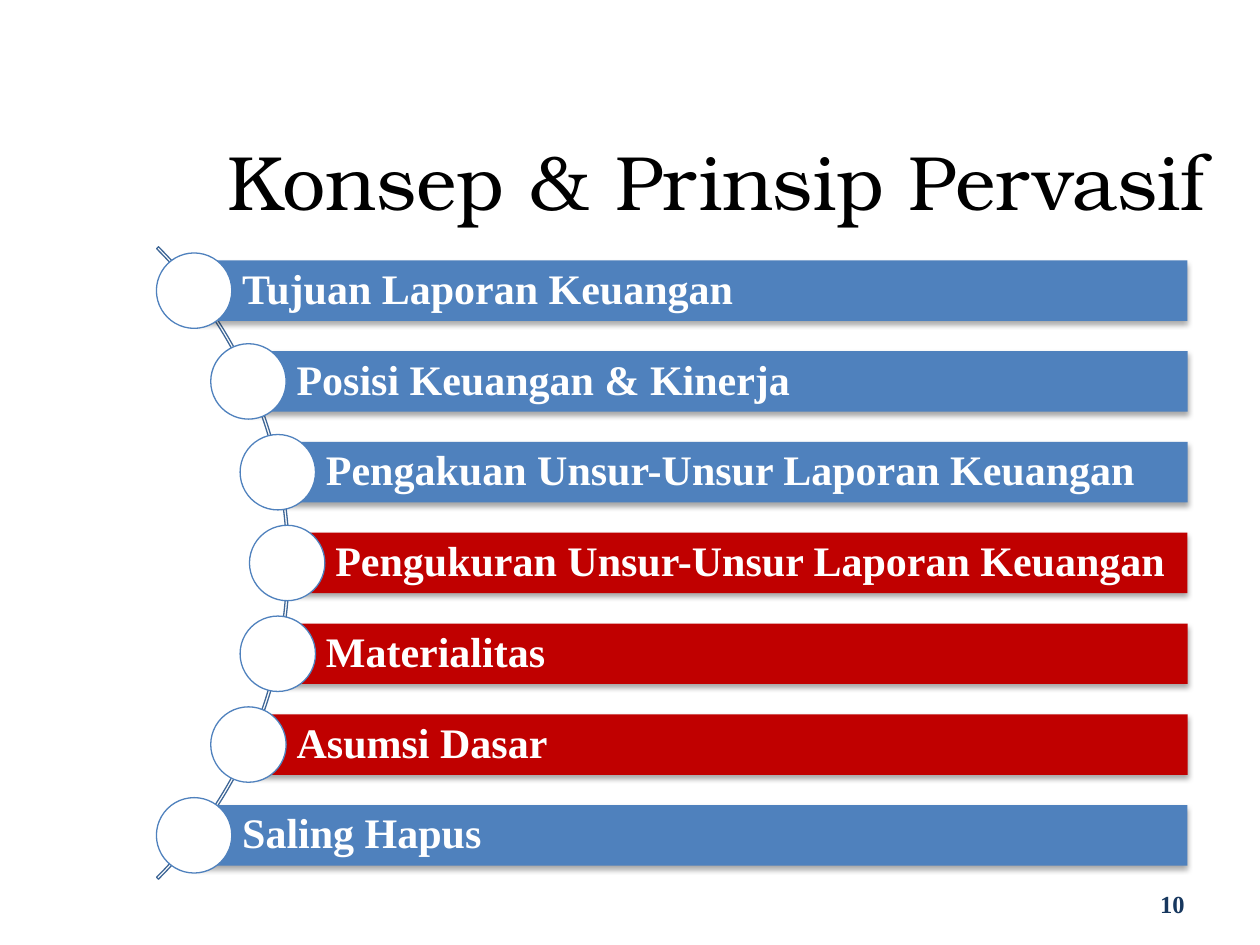
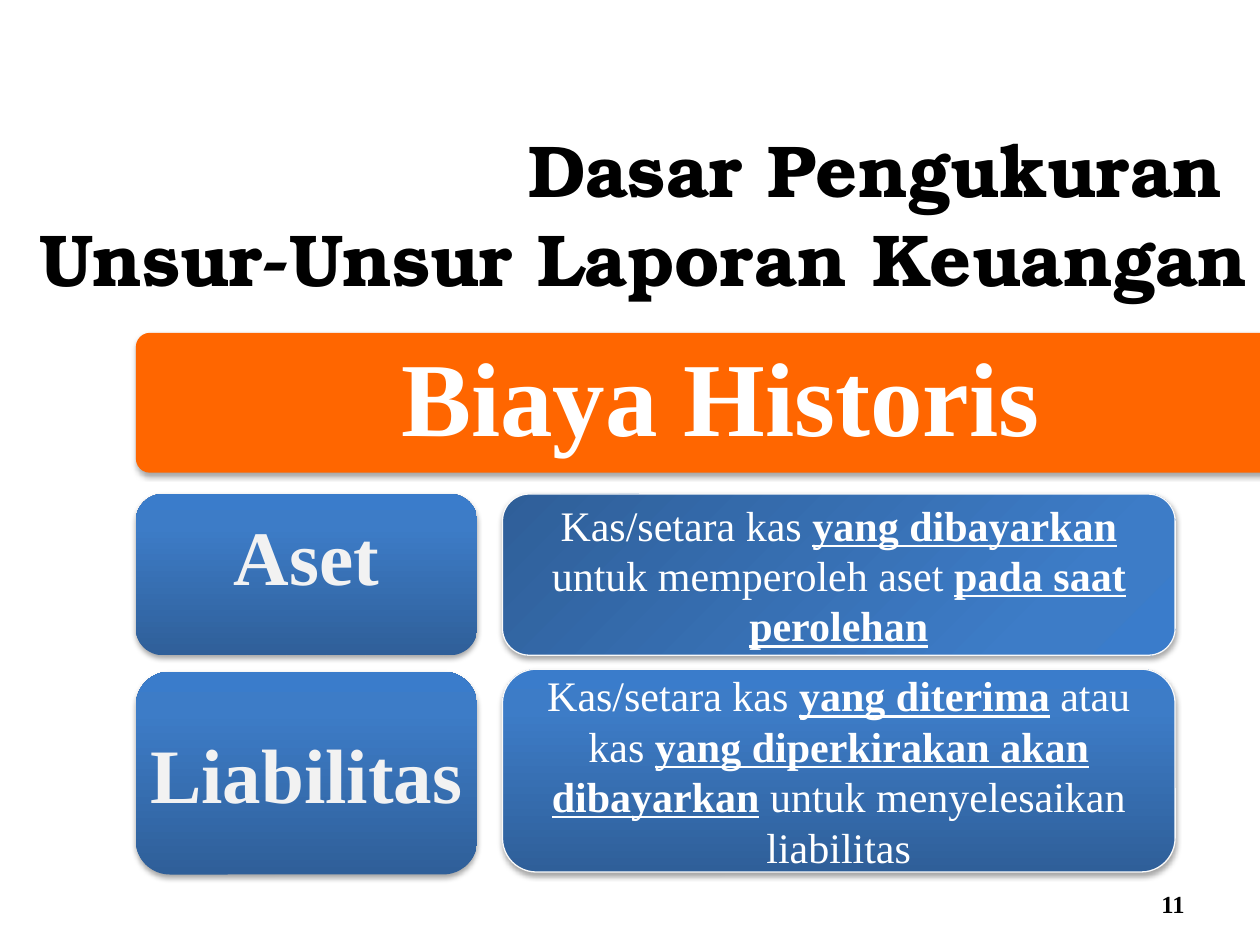
from copy import deepcopy
from math import sqrt

from pptx import Presentation
from pptx.dml.color import RGBColor
from pptx.enum.shapes import MSO_SHAPE
from pptx.enum.text import MSO_ANCHOR, PP_ALIGN
from pptx.oxml import parse_xml
from pptx.oxml.ns import nsdecls, qn
from pptx.util import Cm, Pt

RECT, ROUND = MSO_SHAPE.RECTANGLE, MSO_SHAPE.ROUNDED_RECTANGLE
OVAL, ARC = MSO_SHAPE.OVAL, MSO_SHAPE.BLOCK_ARC
TOP, MID = MSO_ANCHOR.TOP, MSO_ANCHOR.MIDDLE
LEFT, MAIN, RIGHT = PP_ALIGN.LEFT, PP_ALIGN.CENTER, PP_ALIGN.RIGHT


class Theme:
    serif, body = "TeX Gyre Bonum", "Times New Roman"
    white, black, navy = "FFFFFF", "000000", "17375E"
    blue, red, orange = "4F81BD", "C00000", "FF6600"
    arc, rim, pale = "3F6797", "F9F9F9", "F2F2F2"
    fade = ((0, "2F5F99"), (0.8, "3D7CC7"), (1, "3A7CCB"))
    hair = Pt(0.75)
    head = {"name": serif, "size": Pt(44), "bold": False}
    head_bold = {"name": serif, "size": Pt(42), "bold": True}
    item = {"name": body, "size": Pt(24), "bold": True}
    prose = {"name": body, "size": Pt(24), "bold": False}
    label = {"name": body, "size": Pt(44), "bold": True}
    hero = {"name": body, "size": Pt(60), "bold": True}
    page = {"name": body, "size": Pt(14), "bold": True}


SHADOW = (f'<a:outerShdw {nsdecls("a")} blurRad="40000" dist="23000" dir="5400000" '
          'rotWithShape="0"><a:srgbClr val="000000"><a:alpha val="35000"/>'
          '</a:srgbClr></a:outerShdw>')


def rgb(code):
    return RGBColor.from_string(code)


def write(shape, text, style, color, align=MAIN, anchor=MID,
          pad=(0.25, 0.13, 0.25, 0.13), lines=None):
    """Fill a shape with one paragraph; parts between bars are bold and underlined."""
    frame = shape.text_frame
    sides = ("margin_left", "margin_top", "margin_right", "margin_bottom")
    form = {"word_wrap": True, "vertical_anchor": anchor}
    form.update(zip(sides, map(Cm, pad)))
    for key, value in form.items():
        setattr(frame, key, value)
    para = frame.paragraphs[0]
    para.alignment, para.line_spacing = align, lines
    for n, part in enumerate(text.split("|")):
        # A line break splits the part into two runs
        for row, piece in enumerate(part.split("\n")):
            if row:
                para.add_line_break()
            run = para.add_run()
            run.text = piece
            marks = {"bold": True, "underline": True} if n % 2 else {}
            for key, value in {**style, **marks}.items():
                setattr(run.font, key, value)
            run.font.color.rgb = rgb(color)


def add_text(slide, box, text, style, color):
    write(slide.shapes.add_textbox(*map(Cm, box)), text, style, color, RIGHT)


def add_form(slide, kind, box, fill=None, line=None, shade=False, adjust=()):
    form = slide.shapes.add_shape(kind, *map(Cm, box))
    for n, value in enumerate(adjust):
        form.adjustments[n] = value
    if fill:
        form.fill.solid()
        form.fill.fore_color.rgb = rgb(fill)
    else:
        form.fill.background()
    if line:
        form.line.color.rgb = rgb(line)
        form.line.width = Theme.hair
    else:
        form.line.fill.background()
    form.shadow.inherit = False
    if shade:
        form._element.spPr.find(qn("a:effectLst")).append(parse_xml(SHADOW))
    return form


def add_card(slide, box, angle=90, line=None):
    """Rounded card with the three-stop blue fade."""
    card = add_form(slide, ROUND, box, Theme.blue, line, True, (0.167,))
    card.fill.gradient()
    card.fill.gradient_angle = angle
    stops = card._element.spPr.find(".//" + qn("a:gsLst"))
    stops.append(deepcopy(stops[-1]))
    for stop, (place, color) in zip(card.fill.gradient_stops, Theme.fade):
        stop.position = place
        stop.color.rgb = rgb(color)
    return card


def add_page(slide, number, color):
    add_text(slide, (22.61, 17.7, 1.52, 1.02), number, Theme.page, color)


def add_arc_list(slide, items):
    """Bars that start on an arc, each with a disc at its left end."""
    mid_x, mid_y, reach = -3.18, 11.35, 8.97
    step, edge, tall, disc, ring = 1.83, 23.94, 1.22, 1.52, 18.03
    add_form(slide, ARC, (mid_x - ring / 2, mid_y - ring / 2, ring, ring),
             line=Theme.arc, adjust=(189, 27, 0.003))
    for n, (text, color) in enumerate(items):
        drop = (n - (len(items) - 1) / 2) * step
        x, y = mid_x + sqrt(reach ** 2 - drop ** 2), mid_y + drop
        bar = add_form(slide, RECT, (x, y - tall / 2, edge - x, tall),
                       color, shade=True)
        write(bar, text, Theme.item, Theme.white, LEFT,
              pad=(0.97, 0.18, 0.18, 0.18), lines=0.9)
        add_form(slide, OVAL, (x - disc / 2, y - disc / 2, disc, disc),
                 Theme.white, Theme.blue)


def add_pair(slide, name, text, tops, tall, anchor, pad, angle):
    """Label card on the left, explanation card on the right."""
    tag = add_card(slide, (2.74, tops[0], 6.88, tall))
    write(tag, name, Theme.label, Theme.pale, anchor=anchor, pad=(pad, 0.13, pad, 0.13))
    note = add_card(slide, (10.13, tops[1], 13.56, tall), angle, Theme.rim)
    write(note, text, Theme.prose, Theme.white)


def main():
    deck = Presentation()
    deck.slide_width, deck.slide_height = Cm(25.4), Cm(19.05)
    blank = deck.slide_layouts[6]

    # Concepts along the arc
    slide = deck.slides.add_slide(blank)
    add_arc_list(slide, (
        ("Tujuan Laporan Keuangan", Theme.blue),
        ("Posisi Keuangan & Kinerja", Theme.blue),
        ("Pengakuan Unsur-Unsur Laporan Keuangan", Theme.blue),
        ("Pengukuran Unsur-Unsur Laporan Keuangan", Theme.red),
        ("Materialitas", Theme.red),
        ("Asumsi Dasar", Theme.red),
        ("Saling Hapus", Theme.blue),
    ))
    add_text(slide, (1.7, 2.51, 22.86, 2.21), "Konsep & Prinsip Pervasif",
             Theme.head, Theme.black)
    add_page(slide, "10", Theme.navy)

    # Historical cost
    slide = deck.slides.add_slide(blank)
    add_text(slide, (0, 3.18, 25.4, 2.21),
             "Dasar Pengukuran \nUnsur-Unsur Laporan Keuangan",
             Theme.head_bold, Theme.black)
    add_page(slide, "11", Theme.black)
    band = add_form(slide, ROUND, (2.74, 6.71, 23.57, 2.82), Theme.orange,
                    shade=True, adjust=(0.1,))
    write(band, "Biaya Historis", Theme.hero, Theme.white,
          pad=(0.3, 0.2, 0.3, 0.2), lines=0.9)
    add_pair(slide, "Aset",
             "Kas/setara kas |yang dibayarkan| untuk memperoleh aset "
             "|pada saat perolehan|",
             (9.96, 9.96), 3.25, TOP, 0.25, 315)
    add_pair(slide, "Liabilitas",
             "Kas/setara kas |yang diterima| atau kas |yang diperkirakan akan "
             "dibayarkan| untuk menyelesaikan liabilitas",
             (13.54, 13.49), 4.09, MID, 0, 90)

    deck.save("out.pptx")


if __name__ == "__main__":
    main()
